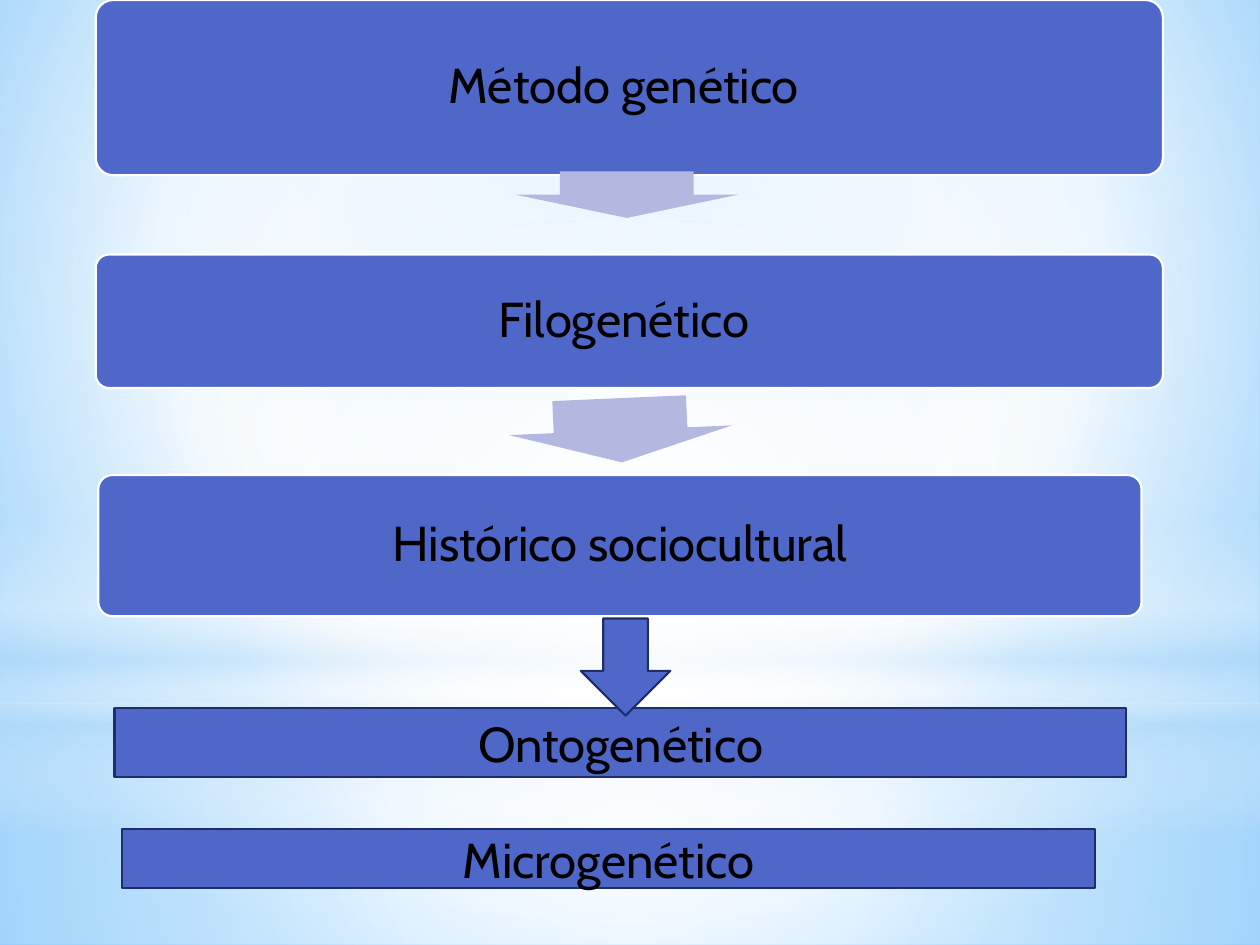
"""Build the slide on the levels of the genetic method."""
from lxml import etree
from pptx import Presentation
from pptx.dml.color import RGBColor
from pptx.enum import shapes, text
from pptx.oxml.ns import qn
from pptx.util import Inches, Pt

BLUE = RGBColor(0x4E, 0x67, 0xC8)
NAVY = RGBColor(0x1F, 0x2E, 0x69)
LILAC = RGBColor(0xB2, 0xB8, 0xE0)
WHITE = RGBColor(0xFF, 0xFF, 0xFF)
BLACK = RGBColor(0, 0, 0)
PALE = RGBColor(0xB4, 0xDC, 0xFA)
SKY = RGBColor(0x9E, 0xD5, 0xFF)
DEEP_SKY = RGBColor(0x5B, 0xB9, 0xFF)
KIND = shapes.MSO_SHAPE
CENTRE = (50, 50, 50, 50)

BACKDROP = [(0, SKY, 100), (60, WHITE, 100), (100, DEEP_SKY, 100)]
GLOWS = [
    (KIND.RECTANGLE, (0, 5.58, 10, 1.92), CENTRE,
     [(0, WHITE, 91), (37, WHITE, 76), (100, PALE, 79)]),
    (KIND.RECTANGLE, (0, 0, 10, 5.58), CENTRE,
     [(0, WHITE, 89), (48, WHITE, 62), (100, PALE, 79)]),
    (KIND.RECTANGLE, (0, 4.12, 10, 2.5), None,
     [(0, WHITE, 0), (29, WHITE, 30), (45, PALE, 40),
      (55, WHITE, 26), (65, PALE, 60), (100, WHITE, 0)]),
    (KIND.OVAL, (0, 1.75, 10, 5.58), CENTRE,
     [(0, WHITE, 100), (56, WHITE, 0)]),
]

ROUNDED = {"kind": KIND.ROUNDED_RECTANGLE, "line": WHITE, "adjust": (0.1,)}
PLAIN = {"kind": KIND.RECTANGLE, "line": NAVY}
STEP = {"kind": KIND.RIGHT_ARROW, "fill": LILAC, "adjust": (0.6, 0.5)}
DIAGRAM = [
    ((0.76, 0, 8.47, 1.39), ROUNDED, {"label": "Método genético "}),
    ((4.79, 0.66, 0.37, 1.77), STEP, {"rotation": 90}),
    ((0.76, 2.02, 8.47, 1.06), ROUNDED, {"label": "Filogenético "}),
    ((4.67, 2.53, 0.51, 1.77), STEP, {"rotation": 87.5}),
    ((0.78, 3.77, 8.28, 1.12), ROUNDED, {"label": "Histórico sociocultural"}),
    ((0.91, 5.62, 8.03, 0.55), PLAIN, {"label": "Ontogenético"}),
    ((4.61, 4.91, 0.71, 0.77), PLAIN, {"kind": KIND.DOWN_ARROW}),
    ((0.97, 6.58, 7.72, 0.47), PLAIN, {"label": "Microgenético"}),
]
LABEL_FONT = {"name": "Cabin", "size": Pt(28)}


def set_gradient(owner, stops, focus):
    gradient = next(owner.iter(qn("a:gradFill")))
    for child in list(gradient):
        gradient.remove(child)
    stop_list = etree.SubElement(gradient, qn("a:gsLst"))
    for position, colour, opacity in stops:
        stop = etree.SubElement(stop_list, qn("a:gs"), pos=str(position * 1000))
        shade = etree.SubElement(stop, qn("a:srgbClr"), val=str(colour))
        if opacity < 100:
            etree.SubElement(shade, qn("a:alpha"), val=str(opacity * 1000))
    if focus:
        spread = etree.SubElement(gradient, qn("a:path"), path="circle")
        sides = {side: str(inset * 1000) for side, inset in zip("ltrb", focus)}
        etree.SubElement(spread, qn("a:fillToRect"), **sides)
    else:
        etree.SubElement(gradient, qn("a:lin"), ang="5400000", scaled="0")


def add_part(slide, kind, place):
    part = slide.shapes.add_shape(kind, *map(Inches, place))
    part.shadow.inherit = False
    part.line.fill.background()
    return part


def add_glow(slide, kind, place, focus, stops):
    glow = add_part(slide, kind, place)
    glow.fill.gradient()
    set_gradient(glow._element.spPr, stops, focus)


def write_label(part, label, spacing):
    frame = part.text_frame
    frame.word_wrap = True
    frame.vertical_anchor = text.MSO_ANCHOR.MIDDLE
    line = frame.paragraphs[0]
    line.alignment = text.PP_ALIGN.CENTER
    line.line_spacing = spacing
    run = line.add_run()
    run.text = label
    for name, value in LABEL_FONT.items():
        setattr(run.font, name, value)
    run.font.color.rgb = BLACK


def add_diagram_part(slide, place, style):
    part = add_part(slide, style["kind"], place)
    part.fill.solid()
    part.fill.fore_color.rgb = style.get("fill", BLUE)
    part.rotation = style.get("rotation", 0)
    for index, value in enumerate(style.get("adjust", ())):
        part.adjustments[index] = value
    if "line" in style:
        part.line.color.rgb = style["line"]
        part.line.width = Pt(1.25)
    if "label" in style:
        spacing = 0.9 if style["kind"] == KIND.ROUNDED_RECTANGLE else 1.0
        write_label(part, style["label"], spacing)


def main():
    deck = Presentation()
    deck.slide_width, deck.slide_height = Inches(10), Inches(7.5)
    slide = deck.slides.add_slide(deck.slide_layouts[6])
    slide.background.fill.gradient()
    set_gradient(slide._element, BACKDROP, (20, 10, 20, 60))
    for glow in GLOWS:
        add_glow(slide, *glow)
    for place, base, extra in DIAGRAM:
        add_diagram_part(slide, place, {**base, **extra})
    deck.save("out.pptx")


if __name__ == "__main__":
    main()
